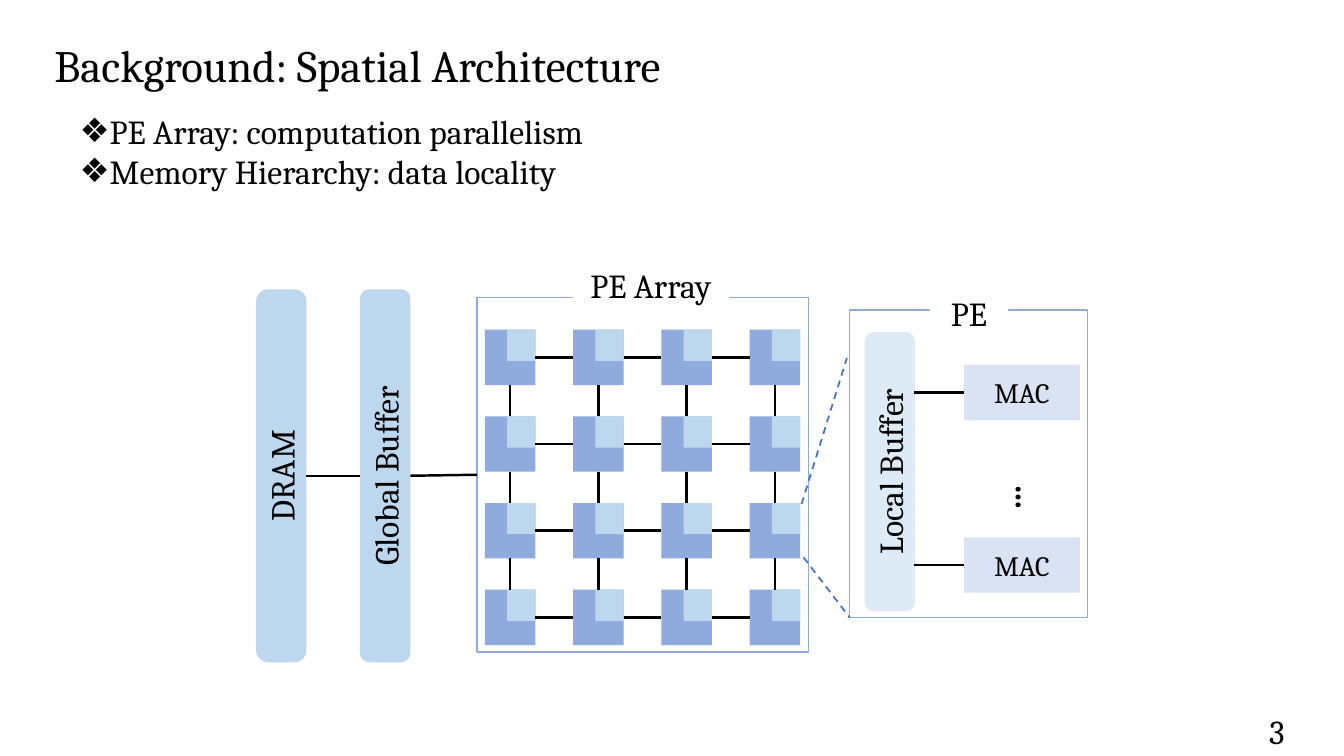
import pptx
import pptx.dml.color
import pptx.enum.dml
import pptx.enum.shapes
import pptx.enum.text
import pptx.oxml.ns
import pptx.util
from lxml import etree
from pptx.util import Inches

FONT = "Cambria"
BLACK, WHITE = "000000", "FFFFFF"
PE_BLUE, BUFFER_BLUE, LOCAL_BLUE, MAC_BLUE, ZOOM_BLUE = "8FAADC", "BDD7EE", "DEEBF7", "DAE3F3", "4472C4"
TOP, LEFT, BOTTOM, RIGHT = range(4)
CENTER = pptx.enum.text.PP_ALIGN.CENTER
ALIGN_LEFT = pptx.enum.text.PP_ALIGN.LEFT
ROUNDED = pptx.enum.shapes.MSO_SHAPE.ROUNDED_RECTANGLE
RECTANGLE = pptx.enum.shapes.MSO_SHAPE.RECTANGLE
GRID_SIZE = 4


def color(hex_string):
    return pptx.dml.color.RGBColor.from_string(hex_string)


def place(shape, left, top, width, height):
    shape.left, shape.top = Inches(left), Inches(top)
    shape.width, shape.height = Inches(width), Inches(height)


def write(shape, text, size, align=ALIGN_LEFT, anchor=pptx.enum.text.MSO_ANCHOR.TOP, bold=False):
    frame = shape.text_frame
    frame.text = text
    frame.word_wrap = True
    frame.auto_size = pptx.enum.text.MSO_AUTO_SIZE.NONE
    frame.vertical_anchor = anchor
    for paragraph in frame.paragraphs:
        paragraph.alignment = align
        paragraph.space_before = pptx.util.Pt(0)
        for run in paragraph.runs:
            run.font.name = FONT
            run.font.size = pptx.util.Pt(size)
            run.font.bold = bold
            run.font.color.rgb = color(BLACK)


def add_label(slide, text, left, top, width, height, size=24, align=ALIGN_LEFT, bold=False):
    label = slide.shapes.add_textbox(Inches(left), Inches(top), Inches(width), Inches(height))
    write(label, text, size, align, bold=bold)
    return label


def add_block(slide, left, top, width, height, fill=None, line=None,
              text="", size=24, corner=0, geometry=ROUNDED):
    block = slide.shapes.add_shape(geometry, Inches(left), Inches(top), Inches(width), Inches(height))
    block.shadow.inherit = False
    if geometry == ROUNDED:
        block.adjustments[0] = corner
    if fill:
        block.fill.solid()
        block.fill.fore_color.rgb = color(fill)
    else:
        block.fill.background()
    if line:
        block.line.color.rgb = color(line)
        block.line.width = pptx.util.Pt(1)
    else:
        block.line.fill.background()
    if text:
        write(block, text, size, CENTER, pptx.enum.text.MSO_ANCHOR.MIDDLE)
    return block


def add_upright_bar(slide, text, left, top, length, fill, corner):
    bar = add_block(slide, left, top, length, 0.5, fill, text=text, corner=corner)
    bar.rotation = 270
    return bar


def add_line(slide, start, end, line=BLACK, width=1.75, dashed=False):
    points = [Inches(value) for value in (*start, *end)]
    connector = slide.shapes.add_connector(pptx.enum.shapes.MSO_CONNECTOR.STRAIGHT, *points)
    connector.line.color.rgb = color(line)
    connector.line.width = pptx.util.Pt(width)
    if dashed:
        connector.line.dash_style = pptx.enum.dml.MSO_LINE.DASH
    etree.SubElement(connector._element.spPr, pptx.oxml.ns.qn("a:effectLst"))
    return connector


def join(slide, first, first_side, second, second_side):
    connector = add_line(slide, (0, 0), (0, 0))
    connector.begin_connect(first, first_side)
    connector.end_connect(second, second_side)


def join_bar(slide, bar, target, target_side, start, end):
    connector = add_line(slide, start, end)
    connector.begin_connect(bar, BOTTOM)
    connector.end_connect(target, target_side)
    connector.begin_x, connector.begin_y = Inches(start[0]), Inches(start[1])
    connector.end_x, connector.end_y = Inches(end[0]), Inches(end[1])


def fill_placeholders(slide):
    title, body = slide.shapes.title, slide.placeholders[1]
    place(title, 0.44, 0.32, 11.12, 0.64)
    write(title, "Background: Spatial Architecture", 32)
    place(body, 0.44, 1.05, 10.75, 0.93)
    write(body, "PE Array: computation parallelism\nMemory Hierarchy: data locality", 24)
    for paragraph in body.text_frame.paragraphs:
        paragraph.level = 1
        properties = paragraph._p.get_or_add_pPr()
        properties.set("marL", str(Inches(0.5)))
        properties.set("indent", str(Inches(-0.25)))
        bullet = etree.SubElement(properties, pptx.oxml.ns.qn("a:buChar"))
        bullet.set("char", "❖")


def add_processing_element(slide, row, column):
    left, top = 4.81 + 0.875 * column, 3.27 + 0.86 * row
    element = add_block(slide, left, top, 0.5, 0.55, PE_BLUE)
    add_block(slide, left + 0.22, top, 0.28, 0.31, BUFFER_BLUE)
    return element


def add_array(slide):
    grid = [[add_processing_element(slide, row, column) for column in range(GRID_SIZE)]
            for row in range(GRID_SIZE)]
    for row in range(GRID_SIZE):
        for column in range(GRID_SIZE - 1):
            join(slide, grid[row][column], RIGHT, grid[row][column + 1], LEFT)
            join(slide, grid[column][row], BOTTOM, grid[column + 1][row], TOP)
    frame = add_block(slide, 4.73, 2.95, 3.29, 3.52, line=PE_BLUE)
    add_block(slide, 5.68, 2.63, 1.55, 0.44, WHITE, geometry=RECTANGLE)
    add_label(slide, "PE Array", 5.56, 2.58, 1.79, 0.5, align=CENTER)
    return frame


def add_memories(slide, array_frame):
    dram = add_upright_bar(slide, "DRAM", 0.94, 4.47, 3.7, BUFFER_BLUE, 0.24)
    global_buffer = add_upright_bar(slide, "Global Buffer", 1.97, 4.47, 3.7, BUFFER_BLUE, 0.18)
    join_bar(slide, dram, global_buffer, TOP, (3.04, 4.72), (3.57, 4.72))
    join_bar(slide, global_buffer, array_frame, LEFT, (4.07, 4.72), (4.73, 4.71))


def add_element_detail(slide):
    frame = add_block(slide, 8.08, 3.42, 3.05, 2.36, line=PE_BLUE)
    frame.rotation = 270
    add_block(slide, 9.22, 2.85, 0.78, 0.52, WHITE, text="PE", geometry=RECTANGLE)
    add_upright_bar(slide, "Local Buffer", 7.44, 4.43, 2.77, LOCAL_BLUE, 0.18)
    for top in (3.62, 5.33):
        mac = add_block(slide, 9.56, top, 1.15, 0.55, MAC_BLUE, text="MAC", size=20)
        wire = add_line(slide, (9.07, top + 0.275), (9.56, top + 0.275))
        wire.end_connect(mac, LEFT)
    add_label(slide, "…", 9.59, 4.51, 0.8, 0.5, bold=True).rotation = 270
    for start, end in (((7.95, 5), (8.4, 3.55)), ((7.97, 5.53), (8.43, 6.13))):
        add_line(slide, start, end, ZOOM_BLUE, 1.25, dashed=True)


def main():
    presentation = pptx.Presentation()
    presentation.slide_width, presentation.slide_height = Inches(13.33), Inches(7.5)
    slide = presentation.slides.add_slide(presentation.slide_layouts[1])
    fill_placeholders(slide)
    array_frame = add_array(slide)
    add_memories(slide, array_frame)
    add_element_detail(slide)
    add_label(slide, "3", 12.49, 7, 0.8, 0.4)
    presentation.save("out.pptx")


if __name__ == "__main__":
    main()
